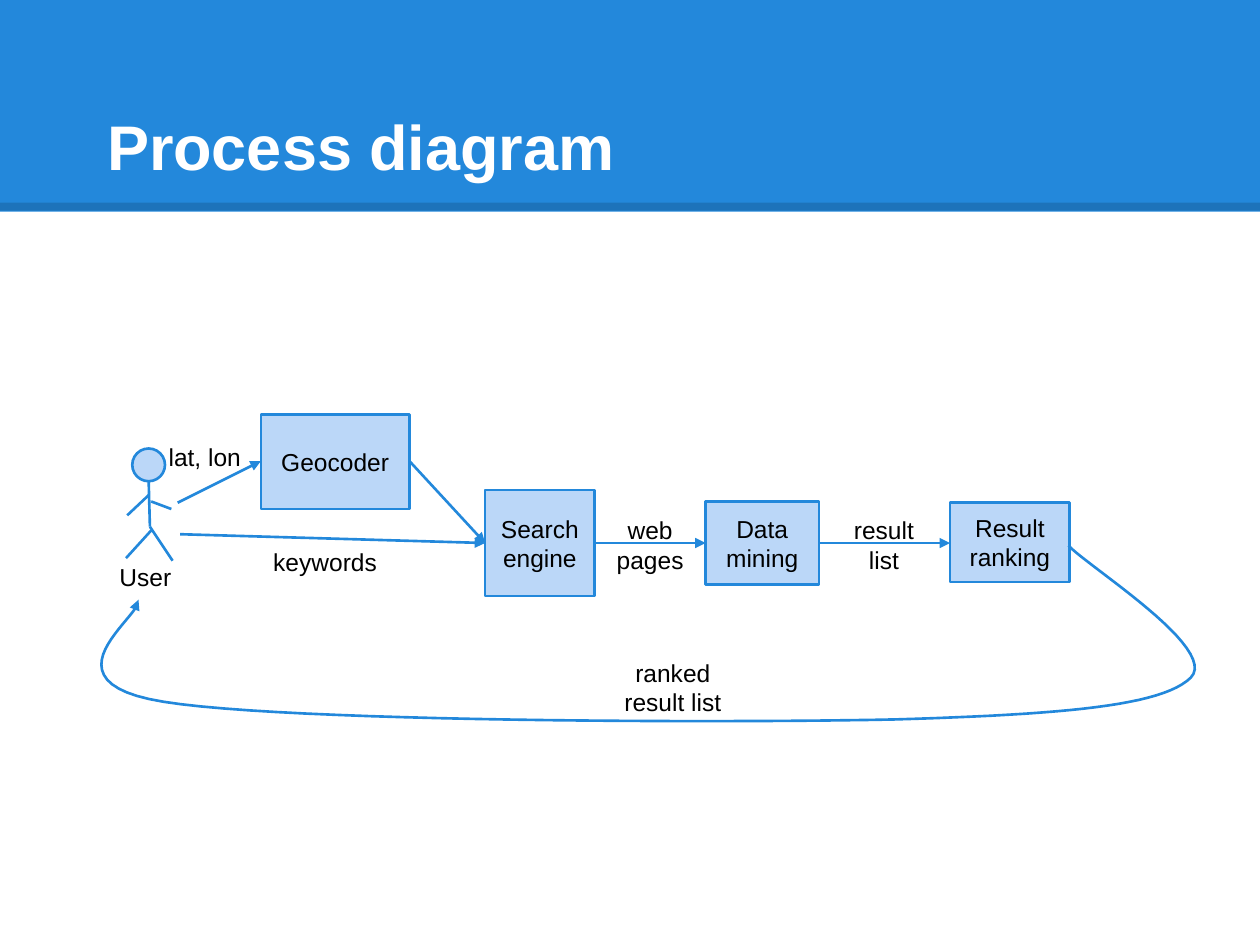
"""Build a slide showing the search process from user input to ranked results."""
from dataclasses import dataclass

from lxml import etree
from pptx import Presentation
from pptx import util as u
from pptx.dml.color import RGBColor
from pptx.enum import shapes, text
from pptx.oxml.ns import qn


@dataclass(frozen=True)
class Theme:
    blue: RGBColor = RGBColor.from_string("2388DB")
    pale: RGBColor = RGBColor.from_string("BBD7F8")
    black: RGBColor = RGBColor.from_string("000000")
    white: RGBColor = RGBColor.from_string("FFFFFF")
    font: str = "Arial"
    title: u.Pt = u.Pt(36)
    body: u.Pt = u.Pt(14)
    stroke: u.Pt = u.Pt(1.5)
    rule: u.Pt = u.Pt(4.5)


theme = Theme()
LEFT, CENTER = text.PP_ALIGN.LEFT, text.PP_ALIGN.CENTER
TOP, MIDDLE = text.MSO_ANCHOR.TOP, text.MSO_ANCHOR.MIDDLE


def outline(s, arrow=False):
    s.line.color.rgb = theme.blue
    s.line.width = theme.stroke
    sp_pr = s._element.spPr
    if arrow:
        etree.SubElement(sp_pr.find(qn("a:ln")), qn("a:tailEnd"), type="triangle")
    etree.SubElement(sp_pr, qn("a:effectLst"))


def write(s, words, align=CENTER, anchor=TOP):
    tf = s.text_frame
    tf.word_wrap = True
    tf.vertical_anchor = anchor
    tf.margin_left = tf.margin_right = tf.margin_top = tf.margin_bottom = u.Inches(0.1)
    p = tf.paragraphs[0]
    p.text = words
    p.alignment = align
    p.font.name = theme.font
    p.font.size = theme.body
    p.font.color.rgb = theme.black
    return tf


prs = Presentation()
prs.slide_width, prs.slide_height = u.Inches(10), u.Inches(7.5)
slide = prs.slides.add_slide(prs.slide_layouts[6])
sps = slide.shapes

header = sps.add_shape(shapes.MSO_SHAPE.RECTANGLE, 0, 0, u.Inches(10), u.Inches(1.68))
header.shadow.inherit = False
header.fill.solid()
header.fill.fore_color.rgb = theme.blue
header.line.fill.background()

rule = sps.add_connector(
    shapes.MSO_CONNECTOR.STRAIGHT, 0, u.Inches(1.64), u.Inches(10), u.Inches(1.64))
outline(rule)
rule.line.color.rgb = theme.black
rule.line.width = theme.rule
etree.SubElement(next(rule._element.spPr.iter(qn("a:srgbClr"))), qn("a:alpha"), val="15000")

title = sps.add_textbox(u.Inches(0.5), u.Inches(0.3), u.Inches(9), u.Inches(1.25))
tf = write(title, "Process diagram", LEFT, text.MSO_ANCHOR.BOTTOM)
tf.margin_left = u.Inches(0.35)
font = tf.paragraphs[0].font
font.size, font.bold = theme.title, True
font.color.rgb = theme.white

RECT, OVAL = shapes.MSO_SHAPE.RECTANGLE, shapes.MSO_SHAPE.OVAL
for kind, words, *box in [
    (RECT, "Geocoder", 2.07, 3.29, 1.18, 0.75),
    (RECT, "Search engine", 3.85, 3.89, 0.87, 0.84),
    (RECT, "Data mining", 5.6, 3.98, 0.9, 0.66),
    (RECT, "Result ranking", 7.54, 3.99, 0.95, 0.63),
    (OVAL, "", 1.05, 3.56, 0.26, 0.26),
]:
    s = sps.add_shape(kind, *map(u.Inches, box))
    s.fill.solid()
    s.fill.fore_color.rgb = theme.pale
    outline(s)
    if words:
        write(s, words, anchor=MIDDLE)

arrows = [
    (1.41, 3.99, 2.07, 3.66),
    (1.43, 4.24, 3.85, 4.31),
    (3.25, 3.66, 3.85, 4.31),
    (4.72, 4.31, 5.6, 4.31),
    (6.5, 4.31, 7.54, 4.31),
]
limbs = [
    (1.18, 3.82, 1.19, 4.18),
    (1.2, 4.21, 1, 4.43),
    (1.19, 4.18, 1.37, 4.45),
    (1.18, 3.93, 1.01, 4.09),
    (1.2, 3.98, 1.36, 4.04),
]
for ends in arrows + limbs:
    s = sps.add_connector(shapes.MSO_CONNECTOR.STRAIGHT, *map(u.Inches, ends))
    outline(s, arrow=ends in arrows)

for words, align, *box in [
    ("User", LEFT, 0.85, 4.36, 0.67, 0.39),
    ("lat, lon", LEFT, 1.24, 3.41, 0.84, 0.5),
    ("keywords", LEFT, 2.07, 4.24, 1.12, 0.5),
    ("web pages", CENTER, 4.74, 3.99, 0.84, 0.39),
    ("result list", CENTER, 6.62, 3.99, 0.79, 0.7),
    ("ranked result list", CENTER, 4.83, 5.12, 1.02, 0.51),
]:
    write(sps.add_textbox(*map(u.Inches, box)), words, align)

start = (8.48, 4.33)
curves = [
    ((8.64, 4.5), (9.68, 5.15), (9.45, 5.38)),
    ((9.22, 5.6), (8.46, 5.67), (7.1, 5.71)),
    ((5.74, 5.74), (2.29, 5.73), (1.3, 5.57)),
    ((0.3, 5.41), (1.13, 4.89), (1.1, 4.76)),
]
steps = 24
points = [start]
for b, c, d in curves:
    a = points[-1]
    for i in range(1, steps + 1):
        t = i / steps
        weights = ((1 - t) ** 3, 3 * t * (1 - t) ** 2, 3 * t ** 2 * (1 - t), t ** 3)
        points.append(tuple(sum(w * q[k] for w, q in zip(weights, (a, b, c, d)))
                            for k in (0, 1)))
route = [(u.Inches(x), u.Inches(y)) for x, y in points]
builder = sps.build_freeform(*route[0])
builder.add_line_segments(route[1:], close=False)
feedback = builder.convert_to_shape()
feedback.fill.background()
outline(feedback, arrow=True)

prs.save("out.pptx")
